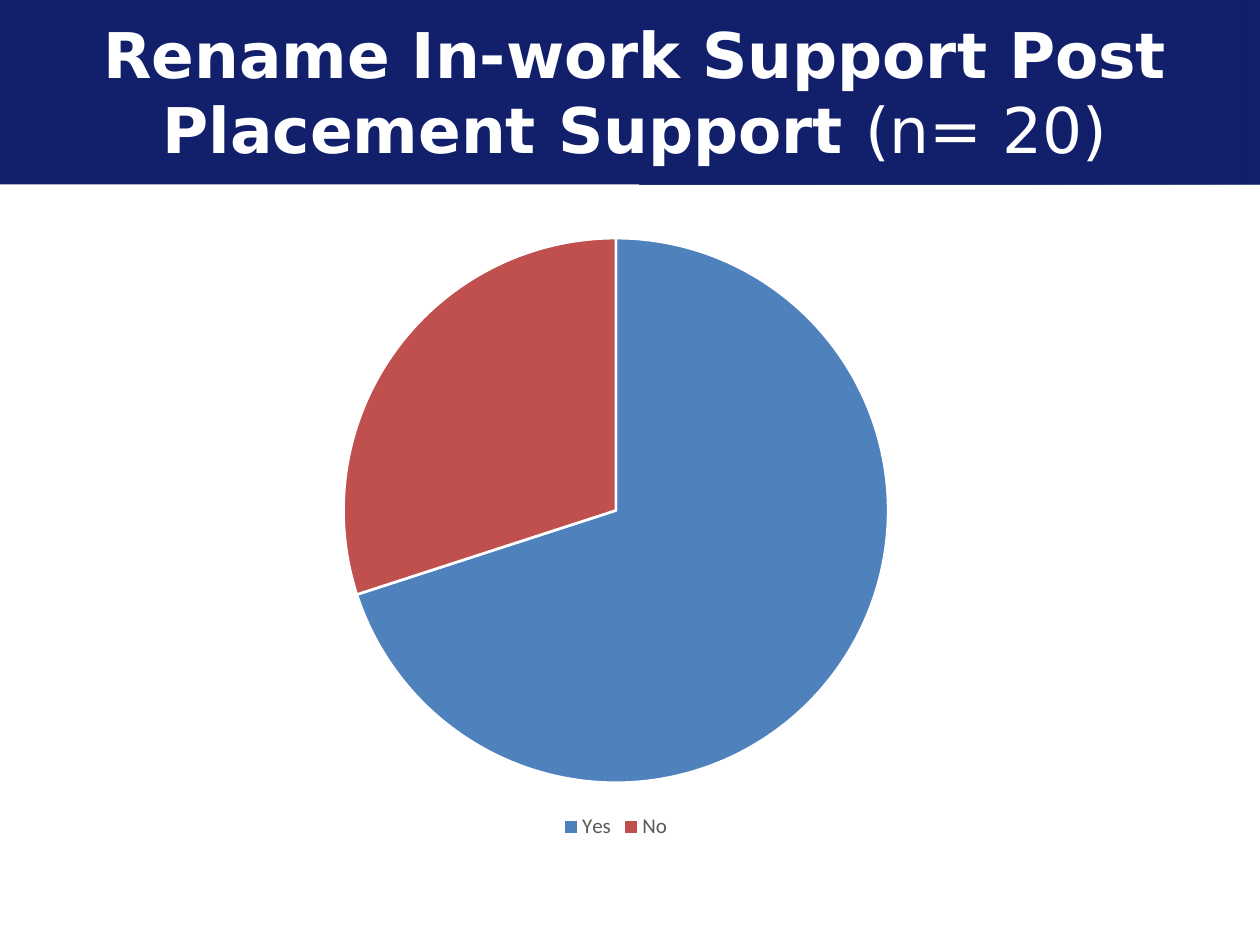
import pptx
import pptx.chart.data
import pptx.dml.color
import pptx.enum.chart
import pptx.enum.shapes
import pptx.enum.text
import pptx.util
from lxml import etree
from pptx.oxml.ns import qn

Cm, Pt = pptx.util.Cm, pptx.util.Pt
NAVY, WHITE, GREY = "121F6B", "FFFFFF", "595959"


def rgb(value):
    return pptx.dml.color.RGBColor.from_string(value)


def fade(s, stops, color):
    """Fill a shape with (position, opacity) stops of one colour, right to left."""
    s.fill.gradient()
    s.fill.gradient_angle = 180
    stop_list = s.fill._fill._gradFill.find(qn("a:gsLst"))
    for old in list(stop_list):
        stop_list.remove(old)
    for position, opacity in stops:
        gs = etree.SubElement(stop_list, qn("a:gs"), pos=str(position * 1000))
        clr = etree.SubElement(gs, qn("a:srgbClr"), val=color)
        etree.SubElement(clr, qn("a:alpha"), val=str(opacity * 1000))


def add_band(slide, x, y, w, h):
    """Navy header with a fading panel on its right half, behind the title."""
    panel_w = Cm(12.5)
    boxes = [(x, w), (x + w - panel_w, panel_w)]
    for i, (left, width) in enumerate(boxes):
        s = slide.shapes.add_shape(
            pptx.enum.shapes.MSO_SHAPE.RECTANGLE, left, y, width, h)
        s.shadow.inherit = False
        s.line.fill.background()
        s.fill.solid()
        s.fill.fore_color.rgb = rgb(NAVY)
        slide.shapes._spTree.insert(2 + i, s._element)
    fade(s, [(0, 66), (36, 95), (77, 100)], NAVY)


def set_title(slide, x, y, w, h):
    title = slide.shapes.title
    title.left, title.top, title.width, title.height = x, y, w, h
    tf = title.text_frame
    tf.word_wrap = True
    tf.auto_size = pptx.enum.text.MSO_AUTO_SIZE.NONE
    tf.vertical_anchor = pptx.enum.text.MSO_ANCHOR.MIDDLE
    p = tf.paragraphs[0]
    p.alignment = pptx.enum.text.PP_ALIGN.CENTER
    parts = [("Rename In-work Support Post Placement Support ", True),
             ("(n= 20)", False)]
    for text, bold in parts:
        r = p.add_run()
        r.text = text
        r.font.name = "DejaVu Sans"
        r.font.size = Pt(36)
        r.font.bold = bold
        r.font.color.rgb = rgb(WHITE)


def add_pie(slide, x, y, w, h):
    data = pptx.chart.data.CategoryChartData()
    data.categories = ["Yes", "No"]
    data.add_series("Series 1", [70, 30])
    chart = slide.shapes.add_chart(
        pptx.enum.chart.XL_CHART_TYPE.PIE, x, y, w, h, data).chart
    chart.has_title = False
    chart.font.name = "Calibri"
    chart.font.size = Pt(10)
    chart.font.color.rgb = rgb("000000")

    # Slices
    plot = chart.plots[0]
    plot.vary_by_categories = True
    for i, color in enumerate(["4F81BD", "C0504D"]):
        point = plot.series[0].points[i]
        point.format.fill.solid()
        point.format.fill.fore_color.rgb = rgb(color)
        point.format.line.color.rgb = rgb(WHITE)
        point.format.line.width = Pt(1.5)

    # Legend
    chart.has_legend = True
    legend = chart.legend
    legend.position = pptx.enum.chart.XL_LEGEND_POSITION.BOTTOM
    legend.include_in_layout = False
    legend.font.name = "Calibri"
    legend.font.size = Pt(12)
    legend.font.color.rgb = rgb(GREY)


def main():
    prs = pptx.Presentation()
    prs.slide_width, prs.slide_height = Cm(25.4), Cm(19.05)
    slide = prs.slides.add_slide(prs.slide_layouts.get_by_name("Title Only"))
    add_band(slide, 0, 0, prs.slide_width, Cm(3.72))
    set_title(slide, Cm(0.7), Cm(0.53), Cm(24.2), Cm(2.6))
    add_pie(slide, Cm(0.69), Cm(4.45), Cm(23.45), Cm(12.57))
    prs.save("out.pptx")


if __name__ == "__main__":
    main()
